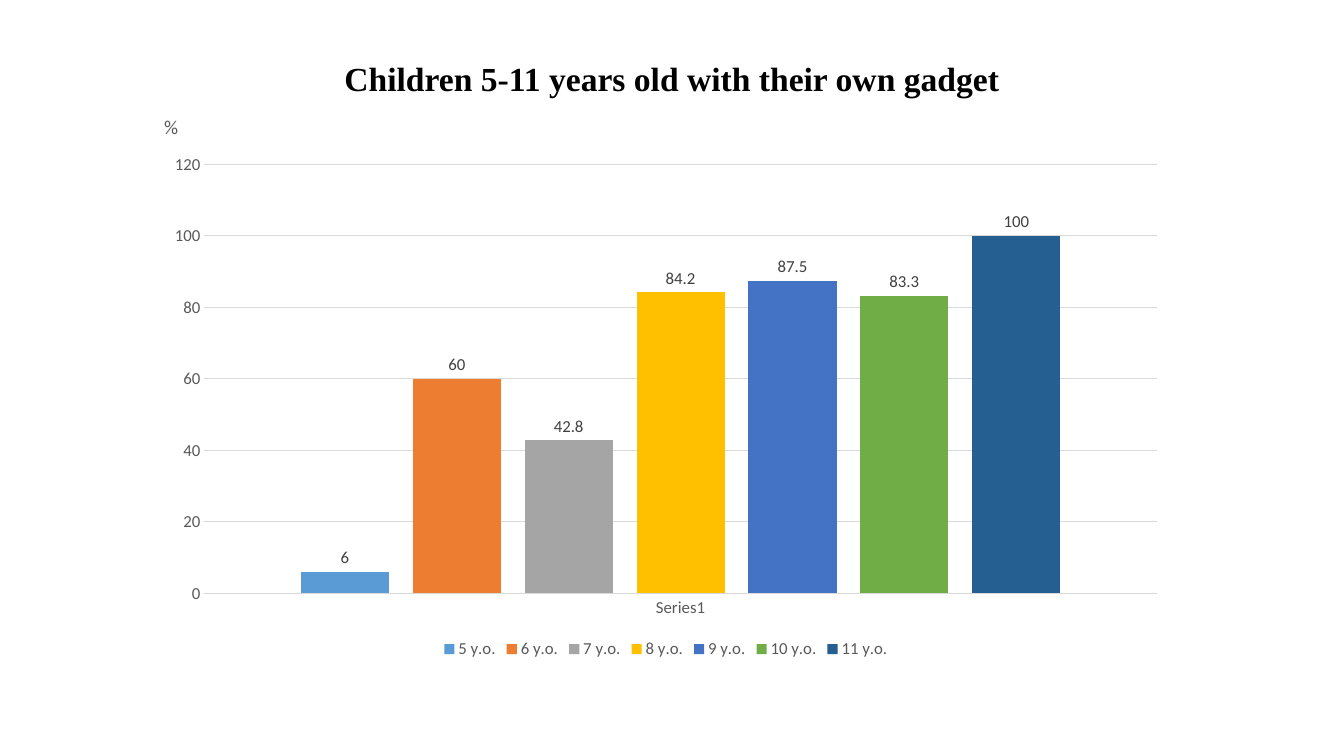
from pptx import Presentation
from pptx.chart.data import CategoryChartData as ChartData
from pptx.dml.color import RGBColor
from pptx.enum.chart import XL_CHART_TYPE as CT, XL_LABEL_POSITION as LP
from pptx.enum.chart import XL_LEGEND_POSITION as LG, XL_TICK_MARK as TM
from pptx.enum.text import MSO_ANCHOR as MA, MSO_AUTO_SIZE as AS, PP_ALIGN as PA
from pptx.util import Cm, Pt

GREY, PALE = "595959", "D9D9D9"
AGES = [
    ("5 y.o.", 6, "5B9BD5"),
    ("6 y.o.", 60, "ED7D31"),
    ("7 y.o.", 42.8, "A5A5A5"),
    ("8 y.o.", 84.2, "FFC000"),
    ("9 y.o.", 87.5, "4472C4"),
    ("10 y.o.", 83.3, "70AD47"),
    ("11 y.o.", 100, "255E91"),
]


def rgb(value):
    return RGBColor.from_string(value)


def assign(obj, values):
    for name, value in values.items():
        setattr(obj, name, value)


def style(font, size, color, name="Calibri", bold=False):
    assign(font, {"size": Pt(size), "name": name, "bold": bold})
    font.color.rgb = rgb(color)


def rule(line):
    line.color.rgb = rgb(PALE)
    line.width = Pt(0.75)


def add_title(s, x, y, w, h):
    sp = s.shapes.title
    assign(sp, {"left": x, "top": y, "width": w, "height": h})
    tf = sp.text_frame
    assign(tf, {"word_wrap": False, "auto_size": AS.SHAPE_TO_FIT_TEXT,
                "vertical_anchor": MA.TOP})
    p = tf.paragraphs[0]
    p.alignment = PA.CENTER
    r = p.add_run()
    r.text = "Children 5-11 years old with their own gadget"
    style(r.font, 24, "000000", "Times New Roman", True)


def add_unit(s, x, y, w, h):
    tf = s.shapes.add_textbox(x, y, w, h).text_frame
    assign(tf, {"word_wrap": True, "auto_size": AS.SHAPE_TO_FIT_TEXT})
    r = tf.paragraphs[0].add_run()
    r.text = "%"
    style(r.font, 14, GREY)


def add_columns(s, x, y, w, h):
    data = ChartData()
    data.categories = ["Series1"]
    for name, value, _ in AGES:
        data.add_series(name, [value])
    chart = s.shapes.add_chart(CT.COLUMN_CLUSTERED, x, y, w, h, data).chart
    style(chart.font, 10, "000000")
    assign(chart, {"has_title": False, "has_legend": True})
    assign(chart.legend, {"position": LG.BOTTOM, "include_in_layout": False})
    style(chart.legend.font, 12, GREY)

    cat, val = chart.category_axis, chart.value_axis
    for axis in (cat, val):
        assign(axis, {"major_tick_mark": TM.NONE, "minor_tick_mark": TM.NONE})
        style(axis.tick_labels.font, 12, GREY)
    assign(val, {"minimum_scale": 0, "maximum_scale": 120, "major_unit": 20,
                 "has_major_gridlines": True})
    rule(cat.format.line)
    rule(val.major_gridlines.format.line)
    val.format.line.fill.background()

    plot = chart.plots[0]
    assign(plot, {"gap_width": 219, "overlap": -27, "vary_by_categories": False})
    for series, (_, _, color) in zip(plot.series, AGES):
        series.format.fill.solid()
        series.format.fill.fore_color.rgb = rgb(color)
        labels = series.data_labels
        assign(labels, {"show_value": True, "position": LP.OUTSIDE_END})
        style(labels.font, 12, "404040")


def main():
    prs = Presentation()
    assign(prs, {"slide_width": Cm(33.87), "slide_height": Cm(19.05)})
    s = prs.slides.add_slide(prs.slide_layouts[5])
    left = Cm(3.89)
    add_columns(s, left, Cm(3.63), Cm(25.78), Cm(13.08))
    add_title(s, Cm(8.08), Cm(1.32), Cm(17.7), Cm(1.27))
    add_unit(s, left, Cm(2.77), Cm(1.09), Cm(0.86))
    prs.save("out.pptx")


if __name__ == "__main__":
    main()
